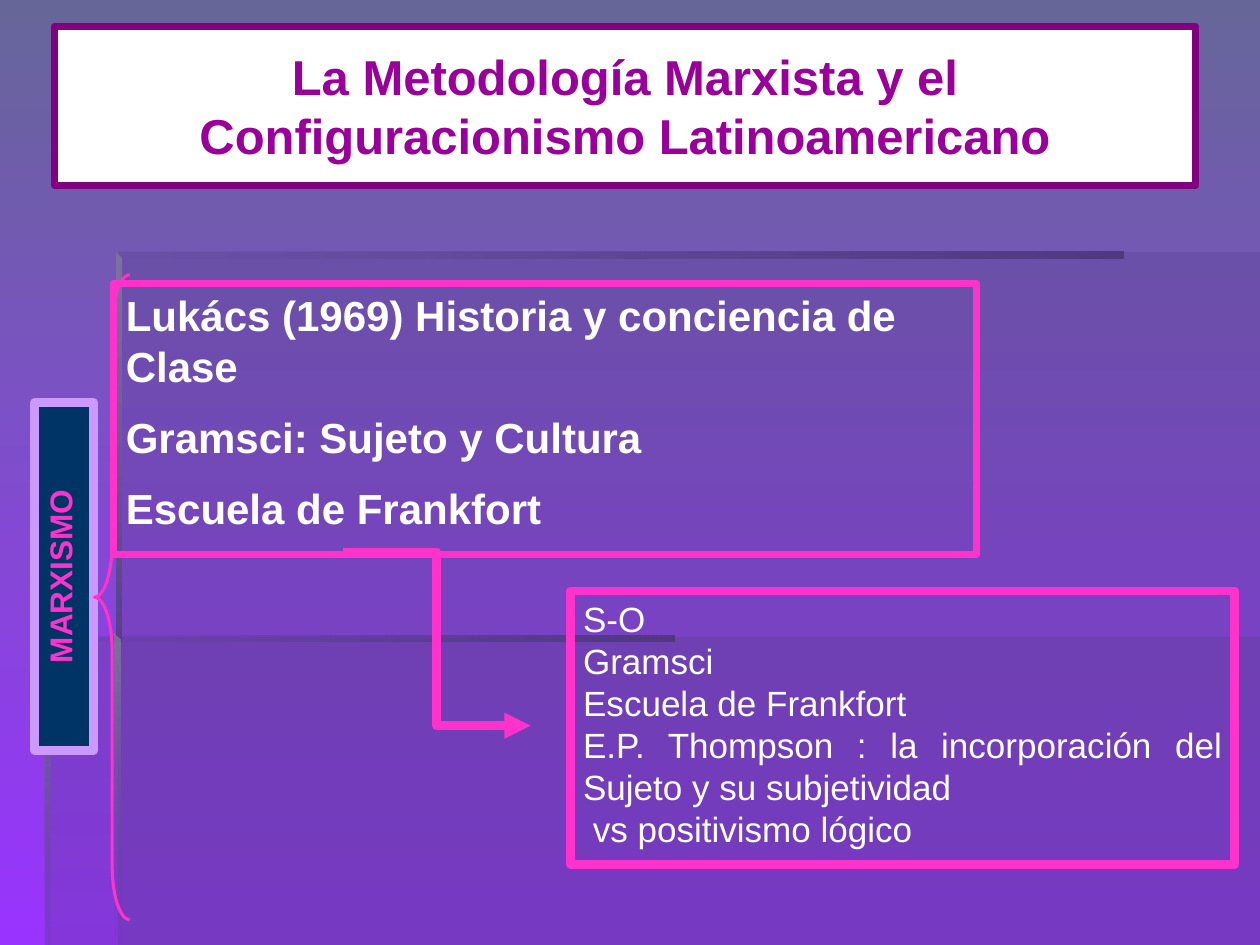
from dataclasses import dataclass

from pptx import Presentation
from pptx.dml.color import RGBColor
from pptx.enum.shapes import MSO_CONNECTOR, MSO_SHAPE
from pptx.enum.text import MSO_ANCHOR, MSO_AUTO_SIZE, PP_ALIGN
from pptx.oxml.ns import qn
from pptx.util import Inches, Pt
from lxml.etree import SubElement

COLORS = {
    "background_top": "666699",
    "background_bottom": "9933FF",
    "shade": "573F8B",
    "shade_dark": "503A7F",
    "shade_light": "7D729F",
    "white": "FFFFFF",
    "title_border": "800080",
    "title_text": "990099",
    "pink": "FF33CC",
    "navy": "003366",
    "lilac": "CC99FF",
}
COLUMNS, ROWS = 100, 75
SLIDE_WIDTH, SLIDE_HEIGHT = Inches(10), Inches(7.5)


@dataclass
class Box:
    left: float
    top: float
    width: float
    height: float

    def point(self, across, down):
        return (
            round((self.left + across * self.width) * SLIDE_WIDTH / COLUMNS),
            round((self.top + down * self.height) * SLIDE_HEIGHT / ROWS),
        )

    def frame(self):
        left, top = self.point(0, 0)
        right, bottom = self.point(1, 1)
        return left, top, right - left, bottom - top


def color(name):
    return RGBColor.from_string(COLORS[name])


def set_alpha(fill_element, percents):
    for element, percent in zip(fill_element.iter(qn("a:srgbClr")), percents):
        if percent < 100:
            SubElement(element, qn("a:alpha"), val=str(percent * 1000))


def fill_gradient(fill, names, angle):
    fill.gradient()
    fill.gradient_angle = angle
    for stop, name in zip(fill.gradient_stops, names):
        stop.color.rgb = color(name)


def style(shape, fill=None, line=None, width=0):
    if fill:
        shape.fill.solid()
        shape.fill.fore_color.rgb = color(fill)
    else:
        shape.fill.background()
    if line:
        shape.line.color.rgb = color(line)
        shape.line.width = Pt(width)
    else:
        shape.line.fill.background()


def add_outline(slide, box, points):
    start, *others = [box.point(*point) for point in points]
    builder = slide.shapes.build_freeform(*start, scale=1.0)
    builder.add_line_segments(others, close=True)
    shape = builder.convert_to_shape()
    shape.shadow.inherit = False
    style(shape, "shade")
    return shape


def add_panels(slide, box):
    step_across, step_down = 0.06, 0.555
    lower = [(step_across, step_down), (step_across, 1), (1, 1), (1, step_down)]
    stepped = [(step_across, step_down), (0, step_down), (0, 1),
               (1, 1), (1, 0), (step_across, 0)]
    for points in (lower, stepped):
        panel = add_outline(slide, box, points)
        set_alpha(panel.fill._xPr, [30])


def add_bar(slide, box, names, alphas):
    upright = box.height > box.width
    cut = box.width / box.height if upright else 0
    points = [(0, 0), (0, 1), (1, 1), (1, cut)]
    bar = add_outline(slide, box, points)
    fill_gradient(bar.fill, names, 270 if upright else 0)
    set_alpha(bar.fill._xPr, alphas)


def add_backdrop(slide):
    fill_gradient(slide.background.fill, ("background_top", "background_bottom"), 270)
    add_panels(slide, Box(3.6, 20, 96.4, 55))
    across = ("shade", "shade_dark")
    down = ("shade_light", "shade")
    add_bar(slide, Box(9.2, 20, 80, 0.5), across, (0, 100))
    add_bar(slide, Box(9.2, 20, 0.5, 31), down, (100, 100))
    add_bar(slide, Box(9.1, 50.4, 0.5, 24.6), down, (100, 0))
    add_bar(slide, Box(3.5, 50.4, 50, 0.5), across, (0, 100))
    add_bar(slide, Box(3.5, 50.4, 0.5, 24.6), down, (100, 10))


def write(shape, lines, size, name, bold=False, align=PP_ALIGN.LEFT,
          anchor=MSO_ANCHOR.TOP, space=0):
    text_frame = shape.text_frame
    text_frame.word_wrap = True
    text_frame.auto_size = MSO_AUTO_SIZE.NONE
    text_frame.vertical_anchor = anchor
    text_frame.text = "\n".join(lines)
    for paragraph in text_frame.paragraphs:
        paragraph.alignment = align
        paragraph.space_before = Pt(space)
        paragraph.font.name = "Arial"
        paragraph.font.size = Pt(size)
        paragraph.font.bold = bold
        paragraph.font.color.rgb = color(name)


def add_title(slide, box):
    title = slide.shapes.title
    title.left, title.top, title.width, title.height = box.frame()
    style(title, "white", "title_border", 4)
    write(title, ["La Metodología Marxista y el Configuracionismo Latinoamericano"],
          28, "title_text", True, PP_ALIGN.CENTER, MSO_ANCHOR.MIDDLE)
    slide.shapes._spTree.append(title._element)


def add_shape(slide, box, kind=MSO_SHAPE.RECTANGLE, **look):
    shape = slide.shapes.add_shape(kind, *box.frame())
    shape.shadow.inherit = False
    style(shape, **look)
    return shape


def add_side_label(slide, box):
    label = add_shape(slide, box, fill="navy", line="lilac", width=5)
    label.rotation = 270
    write(label, ["MARXISMO"], 18, "pink", True, PP_ALIGN.CENTER)


def add_brace(slide, box):
    brace = add_shape(slide, box, MSO_SHAPE.LEFT_BRACE, line="pink", width=1.75)
    brace.adjustments[0] = 1.545
    brace.adjustments[1] = 0.5


def add_approaches(slide, box):
    panel = add_shape(slide, box, line="pink", width=5)
    lines = ["S-O", "Gramsci", "Escuela de Frankfort",
             "E.P. Thompson : la incorporación del Sujeto y su subjetividad",
             " vs positivismo lógico"]
    write(panel, lines, 20, "white", align=PP_ALIGN.JUSTIFY)


def add_authors(slide, box):
    panel = add_shape(slide, box, line="pink", width=4)
    lines = ["Lukács (1969) Historia y conciencia de Clase",
             "Gramsci: Sujeto y Cultura", "Escuela de Frankfort"]
    write(panel, lines, 24, "white", True, space=12)


def add_arrow(slide, box):
    arrow = slide.shapes.add_connector(
        MSO_CONNECTOR.ELBOW, *box.point(0, 0), *box.point(1, 1))
    arrow.line.color.rgb = color("pink")
    arrow.line.width = Pt(5)
    SubElement(arrow.line._get_or_add_ln(), qn("a:tailEnd"), type="triangle")
    SubElement(arrow._element.spPr, qn("a:effectLst"))


def main():
    presentation = Presentation()
    presentation.slide_width = SLIDE_WIDTH
    presentation.slide_height = SLIDE_HEIGHT
    slide = presentation.slides.add_slide(presentation.slide_layouts[5])
    add_backdrop(slide)
    add_title(slide, Box(4.3, 2.1, 90.6, 12.6))
    add_side_label(slide, Box(-8.7, 43.4, 27.6, 4.7))
    add_brace(slide, Box(7.5, 21.8, 2.8, 51.2))
    add_approaches(slide, Box(45.3, 46.9, 52.7, 21.7))
    add_authors(slide, Box(9, 22.5, 68.5, 21.5))
    add_arrow(slide, Box(27.2, 43.8, 14.9, 13.8))
    presentation.save("out.pptx")


if __name__ == "__main__":
    main()
